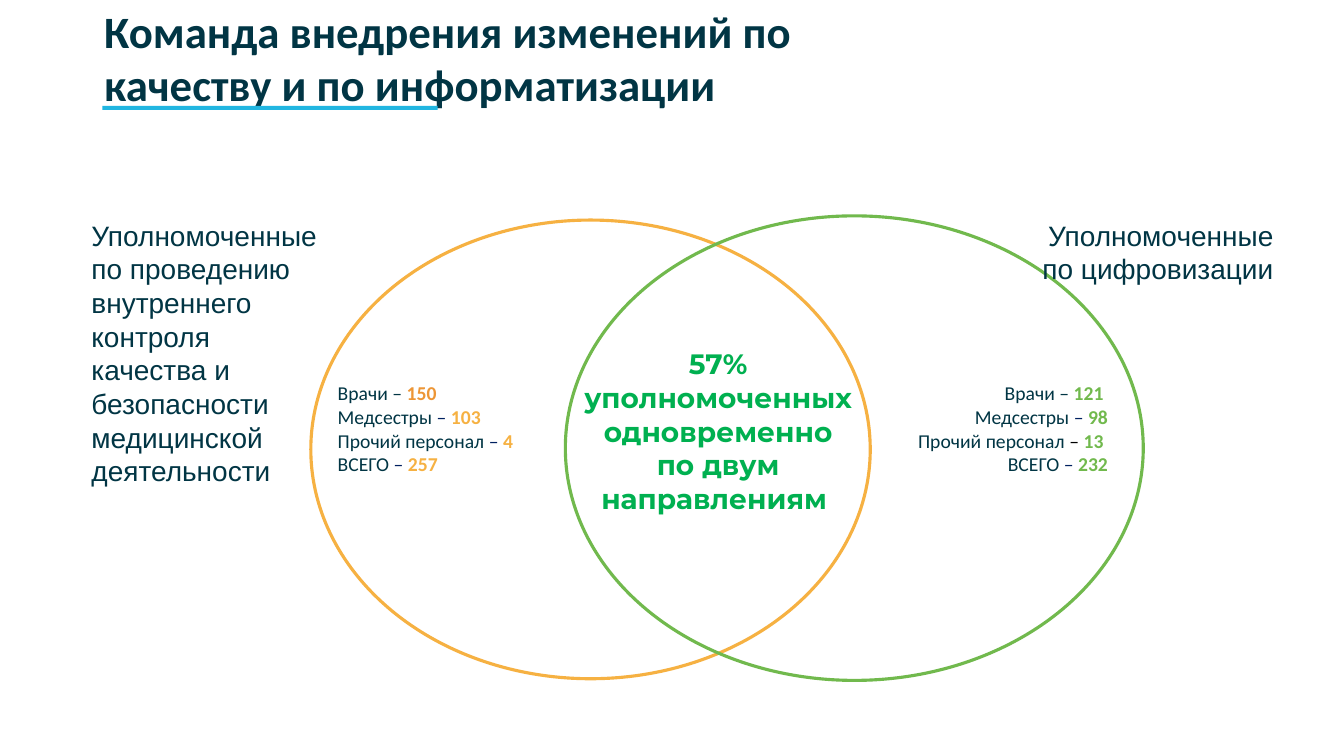
import pptx
import pptx.dml.color
import pptx.enum.shapes
import pptx.enum.text
import pptx.util
from dataclasses import dataclass
from lxml import etree

ALIGN = pptx.enum.text.PP_ALIGN
SHAPE = pptx.enum.shapes.MSO_SHAPE
COLS, ROWS = 160, 90  # square grid cells over a 16:9 slide


@dataclass(frozen=True)
class Theme:
    ink: str = "013544"
    navy: str = "002060"
    black: str = "000000"
    orange: str = "F6B142"
    deep_orange: str = "ED9636"
    green: str = "71B94D"
    bright_green: str = "00B050"
    accent: str = "21B6E1"
    title_size: int = 32
    label_size: int = 20
    count_size: int = 14
    outline: float = 2.25
    heading_font: str = "Calibri"
    label_font: str = "Arial"
    overlap_font: str = "Montserrat"


T = Theme()


def rgb(value):
    return pptx.dml.color.RGBColor.from_string(value)


def grid(prs, col, row, cols, rows):
    """Left, top, width and height in slide units."""
    cw, rh = prs.slide_width / COLS, prs.slide_height / ROWS
    return [round(v) for v in (col * cw, row * rh, cols * cw, rows * rh)]


def place(sp, box):
    sp.left, sp.top, sp.width, sp.height = box


def write(sp, paragraphs, size, font, align=ALIGN.LEFT, bold=False):
    """Fill a shape with paragraphs, each a list of (text, colour, bold) runs."""
    tf = sp.text_frame
    tf.word_wrap = True
    tf.auto_size = pptx.enum.text.MSO_AUTO_SIZE.NONE
    tf.vertical_anchor = pptx.enum.text.MSO_ANCHOR.TOP
    for i, runs in enumerate(paragraphs):
        p = tf.add_paragraph() if i else tf.paragraphs[0]
        p.alignment = align
        p.space_before = pptx.util.Pt(0)
        for text, colour, strong in runs:
            r = p.add_run()
            r.text = text
            r.font.size = pptx.util.Pt(size)
            r.font.name = font
            r.font.bold = bold or strong
            r.font.color.rgb = rgb(colour)


def add_label(s, box, lines, colour, font, align, bold=False):
    sp = s.shapes.add_textbox(*box)
    write(sp, [[(line, colour, False)] for line in lines],
          T.label_size, font, align, bold)


def add_shape(s, kind, box, fill=None, line=None):
    sp = s.shapes.add_shape(kind, *box)
    sp.shadow.inherit = False
    if fill:
        sp.fill.solid()
        sp.fill.fore_color.rgb = rgb(fill)
    else:
        sp.fill.background()
    if line:
        sp.line.color.rgb = rgb(line)
        sp.line.width = pptx.util.Pt(T.outline)
    else:
        sp.line.fill.background()


def fill_counts(sp, box, rows, align):
    """Unbulleted staff counts: label, dash, number."""
    place(sp, box)
    write(sp, [[(label, T.ink, False), (dash, dash_colour, False),
                (number, colour, True)]
               for label, dash, dash_colour, number, colour in rows],
          T.count_size, T.heading_font, align)
    for p in sp.text_frame.paragraphs:
        pPr = p._p.get_or_add_pPr()
        pPr.set("marL", "0")
        pPr.set("indent", "0")
        etree.SubElement(pPr, pptx.oxml.ns.qn("a:buNone"))


def main():
    prs = pptx.Presentation()
    prs.slide_width = pptx.util.Inches(13.33)
    prs.slide_height = pptx.util.Inches(7.5)
    s = prs.slides.add_slide(prs.slide_layouts.get_by_name("Two Content"))
    title, left_counts, right_counts = s.placeholders

    # Title
    place(title, grid(prs, 11.2, -0.2, 103.6, 14.2))
    write(title, [[("Команда внедрения изменений по качеству и по информатизации",
                    T.ink, True)]], T.title_size, T.heading_font)

    # Overlapping circles
    add_shape(s, SHAPE.OVAL, grid(prs, 37, 26.2, 66.6, 54.6), line=T.orange)
    add_shape(s, SHAPE.OVAL, grid(prs, 67.3, 25.7, 68.8, 55.3), line=T.green)

    # Overlap and circle labels
    add_label(s, grid(prs, 68.2, 40.7, 34.6, 21.4),
              ["57%", "уполномоченных одновременно по двум направлениям "],
              T.bright_green, T.overlap_font, ALIGN.CENTER, bold=True)
    add_label(s, grid(prs, 122.5, 25.4, 30.3, 9.2),
              ["Уполномоченные по цифровизации"],
              T.ink, T.label_font, ALIGN.RIGHT)
    add_label(s, grid(prs, 9.7, 25.4, 30.4, 37.6),
              ["Уполномоченные по проведению внутреннего контроля "
               "качества и безопасности медицинской деятельности"],
              T.ink, T.label_font, ALIGN.LEFT)

    # Staff counts
    fill_counts(left_counts, grid(prs, 39, 44.8, 32.9, 12.5), [
        ("Врачи", " – ", T.ink, "150", T.deep_orange),
        ("Медсестры", " – ", T.navy, "103", T.orange),
        ("Прочий персонал", " – ", T.navy, "4", T.orange),
        ("ВСЕГО", " – ", T.navy, "257", T.orange),
    ], ALIGN.LEFT)
    fill_counts(right_counts, grid(prs, 102.4, 44.8, 30.7, 12.5), [
        ("Врачи", " – ", T.ink, "121 ", T.green),
        ("Медсестры", " – ", T.navy, "98", T.green),
        ("Прочий персонал", " – ", T.black, "13 ", T.green),
        ("ВСЕГО", " – ", T.navy, "232", T.green),
    ], ALIGN.RIGHT)

    # Title underline
    add_shape(s, SHAPE.RECTANGLE, grid(prs, 12.2, 12.6, 39.9, 0.5), fill=T.accent)

    prs.save("out.pptx")


if __name__ == "__main__":
    main()
